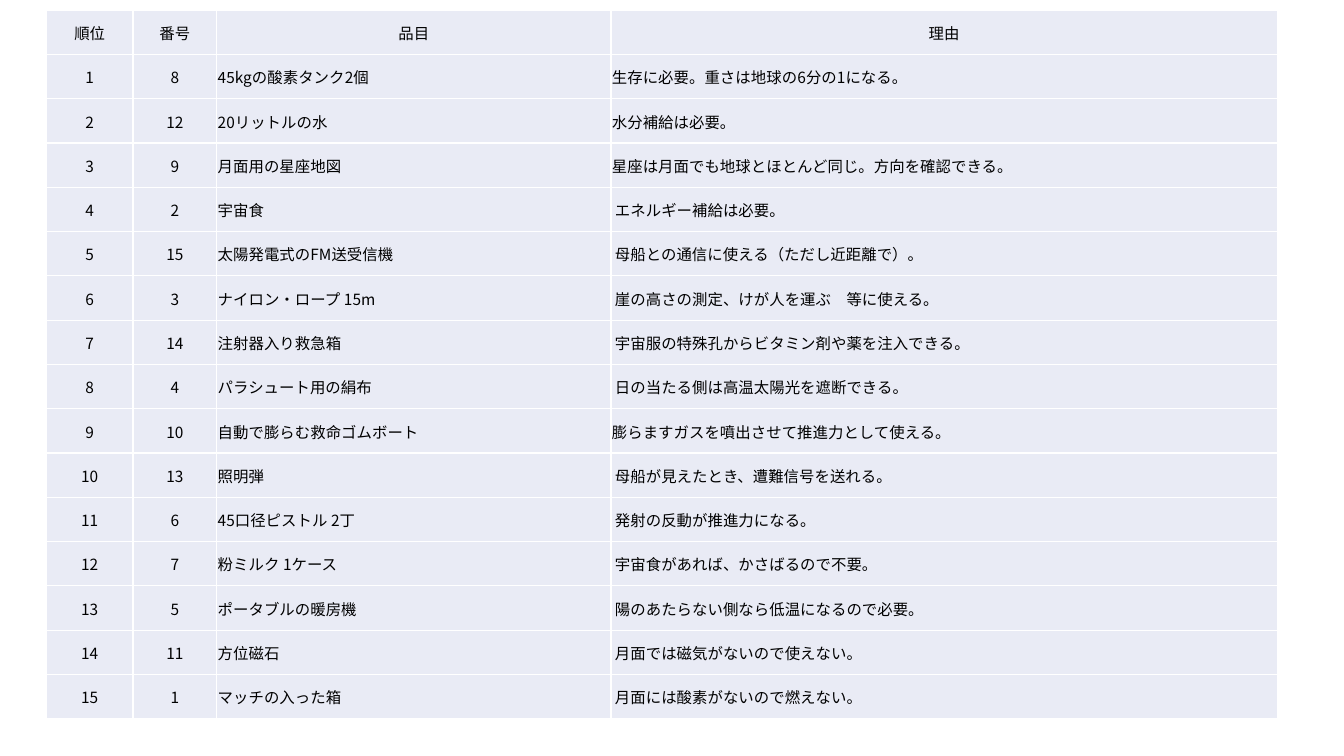
"""Build a one-slide ranking table of survival items for a stay on the Moon."""
from dataclasses import dataclass

from lxml import etree
from pptx import Presentation
from pptx import util as u
from pptx.dml.color import RGBColor
from pptx.enum import text
from pptx.oxml import ns

FONT = "Noto Sans CJK JP"
INK = "000000"
CELL_FILL = "E9EBF5"
BORDER = "FFFFFF"
HEADINGS = ("順位", "番号", "品目", "理由")
COLUMN_WIDTHS = (0.86, 0.83, 3.91, 6.61)
TABLE_HEIGHT = 7.03
MARGIN = 0.01
INDENT = 0.04


@dataclass(frozen=True)
class Item:
    number: int
    name: str
    reason: str
    reason_margin: float = INDENT


ITEMS = (
    Item(8, "45kgの酸素タンク2個", "生存に必要。重さは地球の6分の1になる。", MARGIN),
    Item(12, "20リットルの水", "水分補給は必要。", MARGIN),
    Item(9, "月面用の星座地図", "星座は月面でも地球とほとんど同じ。方向を確認できる。", MARGIN),
    Item(2, "宇宙食", "エネルギー補給は必要。"),
    Item(15, "太陽発電式のFM送受信機", "母船との通信に使える（ただし近距離で）。"),
    Item(3, "ナイロン・ロープ 15m", "崖の高さの測定、けが人を運ぶ　等に使える。"),
    Item(14, "注射器入り救急箱", "宇宙服の特殊孔からビタミン剤や薬を注入できる。"),
    Item(4, "パラシュート用の絹布", "日の当たる側は高温太陽光を遮断できる。"),
    Item(10, "自動で膨らむ救命ゴムボート", "膨らますガスを噴出させて推進力として使える。", MARGIN),
    Item(13, "照明弾", "母船が見えたとき、遭難信号を送れる。"),
    Item(6, "45口径ピストル 2丁", "発射の反動が推進力になる。"),
    Item(7, "粉ミルク 1ケース", "宇宙食があれば、かさばるので不要。"),
    Item(5, "ポータブルの暖房機", "陽のあたらない側なら低温になるので必要。"),
    Item(11, "方位磁石", "月面では磁気がないので使えない。"),
    Item(1, "マッチの入った箱", "月面には酸素がないので燃えない。"),
)


def color(code: str) -> RGBColor:
    return RGBColor.from_string(code)


def add_borders(cell) -> None:
    properties = cell._tc.get_or_add_tcPr()
    for position, side in enumerate(("lnL", "lnR", "lnT", "lnB")):
        line = etree.Element(ns.qn(f"a:{side}"), w=str(u.Pt(1)))
        fill = etree.SubElement(line, ns.qn("a:solidFill"))
        etree.SubElement(fill, ns.qn("a:srgbClr"), val=BORDER)
        properties.insert(position, line)


def fill_cell(cell, words: str, centered: bool, left: float = MARGIN) -> None:
    cell.fill.solid()
    cell.fill.fore_color.rgb = color(CELL_FILL)
    add_borders(cell)
    cell.vertical_anchor = text.MSO_ANCHOR.MIDDLE
    cell.margin_left = u.Inches(left)
    cell.margin_right = cell.margin_top = u.Inches(MARGIN)
    cell.margin_bottom = 0
    para = cell.text_frame.paragraphs[0]
    para.alignment = text.PP_ALIGN.CENTER if centered else text.PP_ALIGN.LEFT
    span = para.add_run()
    span.text = words
    span.font.size = u.Pt(11)
    span.font.name = FONT
    span.font.color.rgb = color(INK)
    etree.SubElement(span.font._element, ns.qn("a:ea"), typeface=FONT)


def add_ranking(page) -> None:
    row_count = len(ITEMS) + 1
    frame = page.shapes.add_table(
        row_count, len(HEADINGS), u.Inches(0.46), u.Inches(0.1),
        u.Inches(sum(COLUMN_WIDTHS)), u.Inches(TABLE_HEIGHT))
    table = frame.table
    table.first_row = table.horz_banding = False
    for column, width in zip(table.columns, COLUMN_WIDTHS):
        column.width = u.Inches(width)
    for row in table.rows:
        row.height = u.Inches(TABLE_HEIGHT / row_count)
    for index, heading in enumerate(HEADINGS):
        fill_cell(table.cell(0, index), heading, centered=True)
    for rank, item in enumerate(ITEMS, start=1):
        fill_cell(table.cell(rank, 0), str(rank), centered=True)
        fill_cell(table.cell(rank, 1), str(item.number), centered=True)
        fill_cell(table.cell(rank, 2), item.name, centered=False)
        fill_cell(table.cell(rank, 3), item.reason, centered=False, left=item.reason_margin)


def main() -> None:
    deck = Presentation()
    deck.slide_width, deck.slide_height = u.Inches(13.33), u.Inches(7.5)
    page = deck.slides.add_slide(deck.slide_layouts.get_by_name("Blank"))
    add_ranking(page)
    deck.save("out.pptx")


if __name__ == "__main__":
    main()
